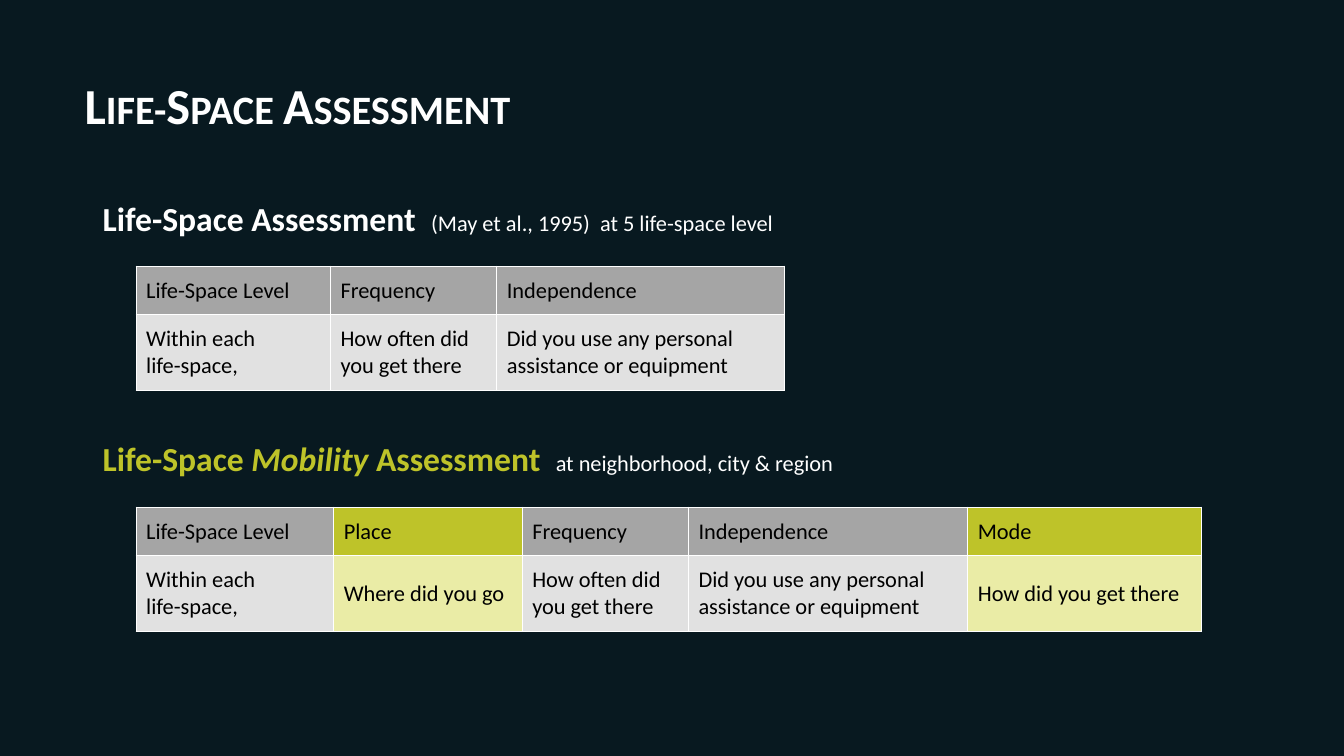
from dataclasses import dataclass

from lxml.etree import SubElement
from pptx import Presentation
from pptx.dml.color import RGBColor
from pptx.enum.text import MSO_ANCHOR, MSO_AUTO_SIZE, PP_ALIGN
from pptx.oxml.ns import qn
from pptx.util import Cm, Pt


@dataclass(frozen=True)
class Theme:
    font: str = "Calibri"
    background: str = "081920"
    light: str = "FFFFFF"
    dark: str = "000000"
    accent: str = "BEC329"
    accent_pale: str = "EAECA6"
    gray: str = "A5A5A5"
    gray_pale: str = "E1E1E1"
    title_size: int = 36
    heading_size: int = 24
    body_size: int = 16
    border: int = 1


THEME = Theme()
ROW_HEIGHTS = (1.22, 1.91)
TABLE_LEFT = 3.43
LEVEL = ("Life-Space Level", "Within each\nlife-space,")
PLACE = ("Place", "Where did you go")
FREQUENCY = ("Frequency", "How often did you get there")
INDEPENDENCE = ("Independence", "Did you use any personal assistance or equipment")
MODE = ("Mode", "How did you get there")
MOBILITY_ONLY = (PLACE, MODE)


def style_font(font, color, size, **extras):
    formats = {"name": THEME.font, "size": Pt(size), "bold": False, **extras}
    for name, value in formats.items():
        setattr(font, name, value)
    font.color.rgb = RGBColor.from_string(color)


def paint(fill, color):
    fill.solid()
    fill.fore_color.rgb = RGBColor.from_string(color)


def place(shape, left, top, width, height):
    box = {"left": left, "top": top, "width": width, "height": height}
    for name, value in box.items():
        setattr(shape, name, Cm(value))


def add_title(s, text):
    title = s.shapes.title
    place(title, 1.88, 1.75, 27.61, 1.8)
    tf = title.text_frame
    tf.auto_size = MSO_AUTO_SIZE.NONE
    tf.vertical_anchor = MSO_ANCHOR.TOP
    p = tf.paragraphs[0]
    p.alignment = PP_ALIGN.LEFT
    r = p.add_run()
    r.text = text
    style_font(r.font, THEME.light, THEME.title_size, bold=True)
    r.font._element.set("cap", "small")


def add_heading(s, top, width, runs):
    """Add a one-line heading from (text, color, size, extra formats) runs."""
    tf = s.shapes.add_textbox(Cm(2.34), Cm(top), Cm(width), Cm(1.28)).text_frame
    tf.word_wrap = True
    tf.auto_size = MSO_AUTO_SIZE.SHAPE_TO_FIT_TEXT
    for text, color, size, extras in runs:
        r = tf.paragraphs[0].add_run()
        r.text = text
        style_font(r.font, color, size, **extras)


def add_borders(cell):
    properties = cell._tc.get_or_add_tcPr()
    for side in ("lnL", "lnR", "lnT", "lnB"):
        line = SubElement(properties, qn(f"a:{side}"), w=str(Pt(THEME.border)))
        fill = SubElement(line, qn("a:solidFill"))
        SubElement(fill, qn("a:srgbClr"), val=THEME.light)


def fill_cell(cell, text, color):
    add_borders(cell)
    paint(cell.fill, color)
    cell.vertical_anchor = MSO_ANCHOR.MIDDLE
    cell.text = text
    for p in cell.text_frame.paragraphs:
        for r in p.runs:
            style_font(r.font, THEME.dark, THEME.body_size)


def add_question_table(s, top, columns):
    """Add a header row and a question row from (question, width) columns."""
    total = sum(width for _, width in columns)
    table = s.shapes.add_table(
        len(ROW_HEIGHTS), len(columns),
        Cm(TABLE_LEFT), Cm(top), Cm(total), Cm(sum(ROW_HEIGHTS)),
    ).table
    for row, height in zip(table.rows, ROW_HEIGHTS):
        row.height = Cm(height)
    for i, (question, width) in enumerate(columns):
        table.columns[i].width = Cm(width)
        if question in MOBILITY_ONLY:
            colors = (THEME.accent, THEME.accent_pale)
        else:
            colors = (THEME.gray, THEME.gray_pale)
        for j, (text, color) in enumerate(zip(question, colors)):
            fill_cell(table.cell(j, i), text, color)


def main():
    prs = Presentation()
    prs.slide_width, prs.slide_height = Cm(33.87), Cm(19.05)
    s = prs.slides.add_slide(prs.slide_layouts[5])
    paint(s.background.fill, THEME.background)

    add_title(s, "Life-Space Assessment")

    strong = {"bold": True}
    big, small = THEME.heading_size, THEME.body_size
    add_heading(s, 4.85, 25.2, [
        ("Life-Space Assessment  ", THEME.light, big, strong),
        ("(May et al., 1995)  at 5 life-space level", THEME.light, small, {}),
    ])
    add_question_table(s, 6.71, [
        (LEVEL, 4.9), (FREQUENCY, 4.19), (INDEPENDENCE, 7.26),
    ])

    add_heading(s, 10.92, 27.05, [
        ("Life-Space ", THEME.accent, big, strong),
        ("Mobility ", THEME.accent, big, {**strong, "italic": True}),
        ("Assessment  ", THEME.accent, big, strong),
        ("at neighborhood, city & region", THEME.light, small, {}),
    ])
    add_question_table(s, 12.78, [
        (LEVEL, 4.98), (PLACE, 4.75), (FREQUENCY, 4.19),
        (INDEPENDENCE, 7.04), (MODE, 5.89),
    ])
    prs.save("out.pptx")


if __name__ == "__main__":
    main()
